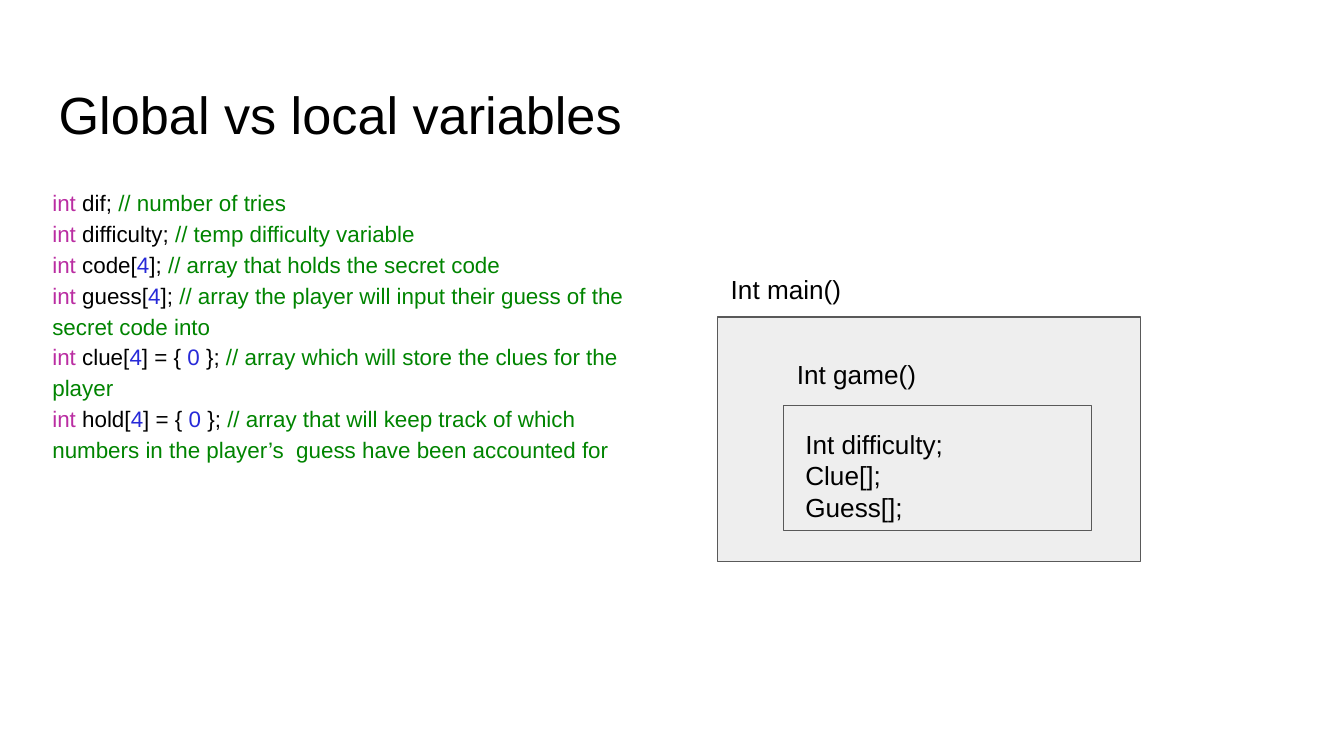
from dataclasses import dataclass
from itertools import groupby

from pptx import Presentation
from pptx.dml.color import RGBColor
from pptx.enum.shapes import MSO_SHAPE
from pptx.enum.text import MSO_ANCHOR
from pptx.slide import Slide
from pptx.util import Cm, Pt

RECTANGLE = MSO_SHAPE.RECTANGLE
TOP = MSO_ANCHOR.TOP


@dataclass(frozen=True)
class Theme:
    font: str = "Arial"
    title_size: int = 28
    code_size: int = 12
    label_size: int = 14
    line_width: float = 0.75
    code_spacing: float = 1.15
    text: str = "000000"
    keyword: str = "BA2DA2"
    number: str = "272AD8"
    comment: str = "008400"
    scope_fill: str = "EEEEEE"
    scope_line: str = "595959"


@dataclass(frozen=True)
class Box:
    """Left, top, width and height in centimetres."""
    left: float
    top: float
    width: float
    height: float

    def lengths(self) -> tuple[Cm, Cm, Cm, Cm]:
        return Cm(self.left), Cm(self.top), Cm(self.width), Cm(self.height)


@dataclass(frozen=True)
class Run:
    text: str
    color: str


@dataclass(frozen=True)
class Declaration:
    code: str
    comment: str


@dataclass(frozen=True)
class Scope:
    name: str
    label: Box
    frame: Box


THEME = Theme()
Line = list[Run]

DECLARATIONS = [
    Declaration(" dif; ", "// number of tries"),
    Declaration(" difficulty; ", "// temp difficulty variable"),
    Declaration(" code[4]; ", "// array that holds the secret code"),
    Declaration(" guess[4]; ",
                "// array the player will input their guess of the secret code into"),
    Declaration(" clue[4] = { 0 }; ",
                "// array which will store the clues for the player"),
    Declaration(" hold[4] = { 0 }; ",
                "// array that will keep track of which numbers in the player’s  guess"
                " have been accounted for"),
]

SCOPES = [
    Scope("Int main()", Box(13.56, 4.91, 8.46, 2.36), Box(13.56, 5.99, 8, 4.62)),
    Scope("Int game()", Box(14.81, 6.53, 8.46, 1.98), Box(14.81, 7.67, 5.82, 2.36)),
]

LOCALS = ["Int difficulty;", "Clue[];", "Guess[];"]


def plain(text: str) -> Line:
    return [Run(text, THEME.text)]


def highlight(declaration: Declaration) -> Line:
    """Colour the keyword, the digits and the comment of a declaration."""
    code = [Run("".join(chars), THEME.number if is_digit else THEME.text)
            for is_digit, chars in groupby(declaration.code, str.isdigit)]
    return [Run("int", THEME.keyword), *code, Run(declaration.comment, THEME.comment)]


def add_text(slide: Slide, box: Box, lines: list[Line], size: int,
             spacing: float = 1.0) -> None:
    tf = slide.shapes.add_textbox(*box.lengths()).text_frame
    tf.word_wrap = True
    tf.vertical_anchor = TOP
    tf.margin_left = tf.margin_top = tf.margin_right = tf.margin_bottom = Cm(0.25)
    for i, line in enumerate(lines):
        p = tf.add_paragraph() if i else tf.paragraphs[0]
        p.line_spacing = spacing
        for run in line:
            r = p.add_run()
            r.text = run.text
            r.font.name = THEME.font
            r.font.size = Pt(size)
            r.font.color.rgb = RGBColor.from_string(run.color)


def add_frame(slide: Slide, box: Box) -> None:
    sp = slide.shapes.add_shape(RECTANGLE, *box.lengths())
    sp.shadow.inherit = False
    sp.fill.solid()
    sp.fill.fore_color.rgb = RGBColor.from_string(THEME.scope_fill)
    sp.line.color.rgb = RGBColor.from_string(THEME.scope_line)
    sp.line.width = Pt(THEME.line_width)


def main() -> None:
    prs = Presentation()
    prs.slide_width, prs.slide_height = Cm(25.4), Cm(14.29)
    s = prs.slides.add_slide(prs.slide_layouts[6])

    add_text(s, Box(0.86, 1.3, 23.67, 1.6), [plain("Global vs local variables")],
             THEME.title_size)
    add_text(s, Box(0.74, 3.25, 11.68, 9.5), [highlight(d) for d in DECLARATIONS],
             THEME.code_size, THEME.code_spacing)
    for scope in SCOPES:
        add_text(s, scope.label, [plain(scope.name)], THEME.label_size)
        add_frame(s, scope.frame)
    add_text(s, Box(14.97, 7.85, 8.46, 1.98), [plain(v) for v in LOCALS],
             THEME.label_size)

    prs.save("out.pptx")


if __name__ == "__main__":
    main()
